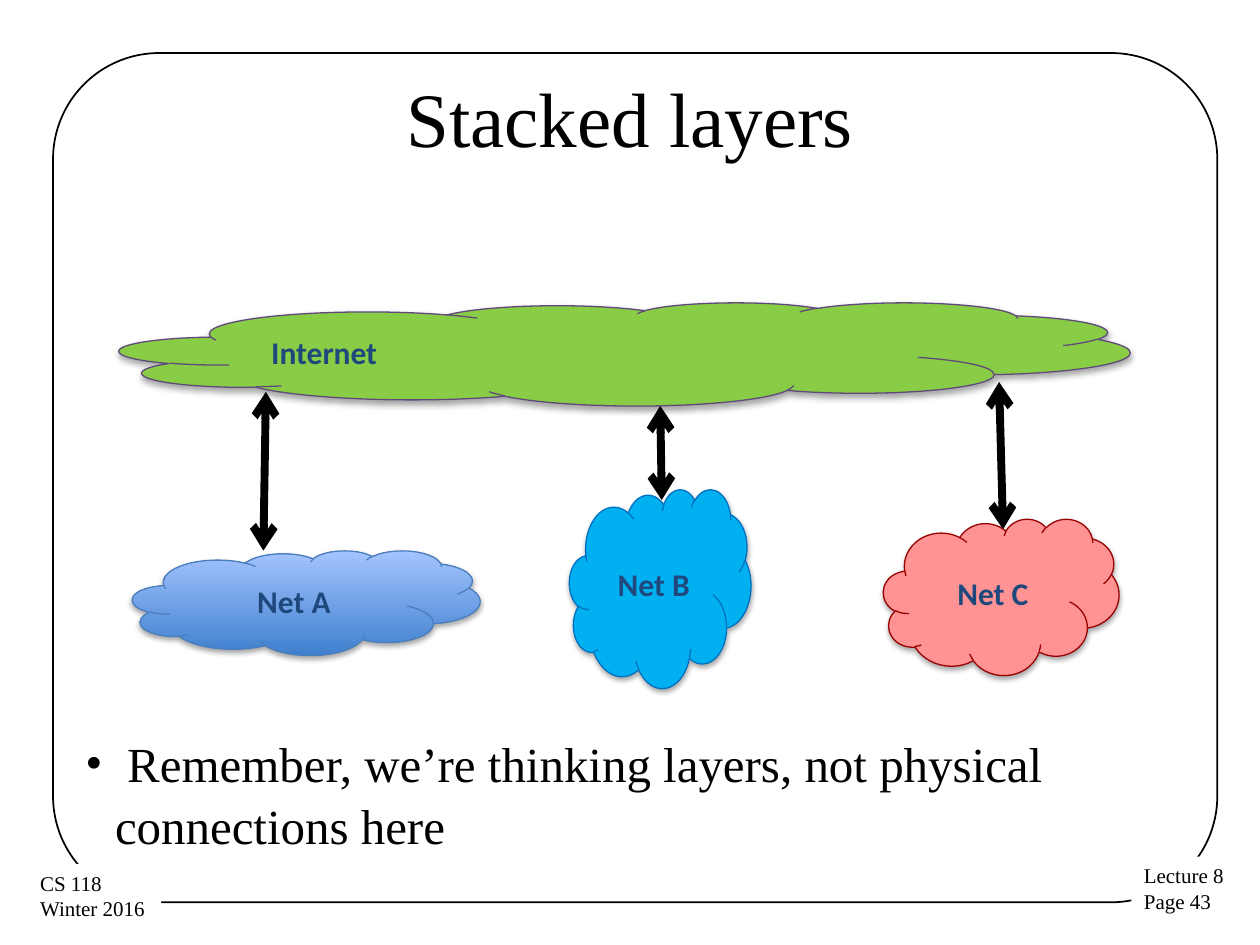
from lxml import etree
from pptx import Presentation
from pptx.dml.color import RGBColor as RGB
from pptx.enum.shapes import MSO_CONNECTOR as CONN, MSO_SHAPE as SHAPE
from pptx.enum.text import MSO_ANCHOR as ANCHOR, MSO_AUTO_SIZE as AUTO, PP_ALIGN as ALIGN
from pptx.oxml import parse_xml
from pptx.oxml.ns import nsdecls, qn
from pptx.util import Cm, Pt

COLORS = {
    "black": "000000", "white": "FFFFFF", "label": "1F497D",
    "a_dark": "3F80CE", "a_light": "A4C4FF", "a_line": "4B7EBC",
    "b": "00B0F0", "b_line": "0070C0",
    "c": "FF9393", "c_line": "990000",
    "internet": "89CC45", "internet_line": "604A7B",
}
SERIF = "Times New Roman"


def rgb(name):
    return RGB.from_string(COLORS[name])


def write(sp, text, size, font=SERIF, color="black", bold=False,
          align=ALIGN.LEFT, anchor=ANCHOR.TOP, wrap=True):
    tf = sp.text_frame
    tf.text = text
    tf.word_wrap = wrap
    tf.vertical_anchor = anchor
    for p in tf.paragraphs:
        p.alignment = align
        for r in p.runs:
            r.font.size = Pt(size)
            r.font.name = font
            r.font.bold = bold
            r.font.color.rgb = rgb(color)
    return tf


prs = Presentation()
prs.slide_width, prs.slide_height = Cm(25.4), Cm(19.05)
s = prs.slides.add_slide(prs.slide_layouts[6])

frame = s.shapes.add_shape(SHAPE.ROUNDED_RECTANGLE, Cm(1.07), Cm(1.07), Cm(23.47), Cm(17.12))
frame.adjustments[0] = 0.125
frame.shadow.inherit = False
frame.fill.background()
frame.line.color.rgb = rgb("black")
frame.line.width = Pt(1)

footers = [
    ("Lecture 8\nPage 43", 22.81, 17.27, 2.13),
    ("CS 118\nWinter 2016", 0.56, 17.42, 2.69),
]
for text, x, y, w in footers:
    sp = s.shapes.add_shape(SHAPE.RECTANGLE, Cm(x), Cm(y), Cm(w), Cm(1.3))
    sp.shadow.inherit = False
    sp.fill.solid()
    sp.fill.fore_color.rgb = rgb("white")
    sp.line.fill.background()
    tf = write(sp, text, 12, wrap=False)
    tf.auto_size = AUTO.SHAPE_TO_FIT_TEXT

title = s.shapes.add_textbox(Cm(1.27), Cm(0.76), Cm(22.86), Cm(3.18))
write(title, "Stacked layers", 44, align=ALIGN.CENTER, anchor=ANCHOR.MIDDLE)

arrows = [
    (5.31, 11.1, 5.36, 7.9),
    (13.34, 10.08, 13.31, 8.18),
    (20.22, 10.67, 20.14, 7.7),
]
for ends in arrows:
    arrow = s.shapes.add_connector(CONN.STRAIGHT, *map(Cm, ends))
    arrow.line.color.rgb = rgb("black")
    arrow.line.width = Pt(4.5)
    ln = arrow.line._get_or_add_ln()
    for end in ("a:headEnd", "a:tailEnd"):
        etree.SubElement(ln, qn(end), type="arrow")
    etree.SubElement(arrow._element.spPr, qn("a:effectLst"))

clouds = [
    ("Net A", 2.67, 11.1, 7.01, 2.11, ("a_dark", "a_light"), "a_line", ALIGN.CENTER),
    ("Net B", 11.48, 9.86, 3.66, 4.01, ("b",), "b_line", ALIGN.CENTER),
    ("Net C", 17.81, 10.46, 4.75, 3.15, ("c",), "c_line", ALIGN.CENTER),
    ("Internet", 2.41, 6.1, 20.37, 2.08, ("internet",), "internet_line", ALIGN.LEFT),
]
for text, x, y, w, h, fills, line, align in clouds:
    sp = s.shapes.add_shape(SHAPE.CLOUD, Cm(x), Cm(y), Cm(w), Cm(h))
    if len(fills) > 1:
        sp.fill.gradient()
        sp.fill.gradient_angle = 90
        for stop, name in zip(sp.fill.gradient_stops, fills):
            stop.color.rgb = rgb(name)
    else:
        sp.fill.solid()
        sp.fill.fore_color.rgb = rgb(fills[0])
    sp.line.color.rgb = rgb(line)
    sp.line.width = Pt(0.75)
    sp.shadow.inherit = False
    sp._element.spPr.find(qn("a:effectLst")).append(parse_xml(
        f'<a:outerShdw {nsdecls("a")} blurRad="40000" dist="23000" dir="5400000" rotWithShape="0">'
        f'<a:srgbClr val="{COLORS["black"]}"><a:alpha val="35000"/></a:srgbClr></a:outerShdw>'))
    write(sp, text, 18, "Calibri", "label", True, align, ANCHOR.MIDDLE)

body = s.shapes.add_textbox(Cm(1.47), Cm(14.6), Cm(22.66), Cm(2.64))
tf = write(body, " Remember, we’re thinking layers, not physical connections here", 28)
tf.auto_size = AUTO.SHAPE_TO_FIT_TEXT
p = tf.paragraphs[0]
p.line_spacing = 1.05
pPr = p._p.get_or_add_pPr()
pPr.set("marL", str(Cm(0.6)))
pPr.set("indent", str(-Cm(0.6)))
etree.SubElement(pPr, qn("a:buFont"), typeface=SERIF)
etree.SubElement(pPr, qn("a:buChar"), char="•")

prs.save("out.pptx")
